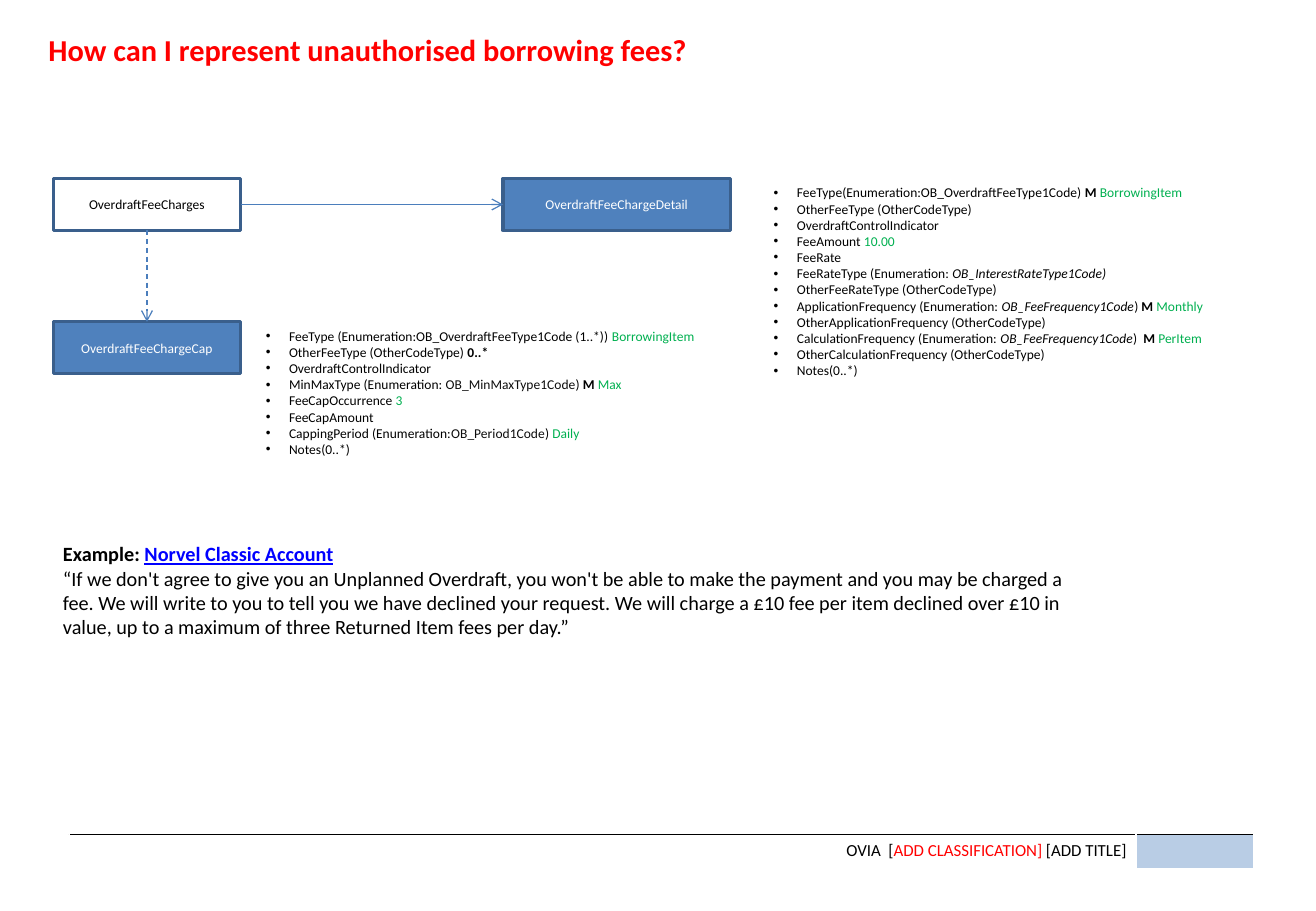
from dataclasses import dataclass
from typing import Any

from lxml.etree import SubElement
from pptx import Presentation
from pptx.dml.color import RGBColor as RGB
from pptx.enum.dml import MSO_LINE as Dash
from pptx.enum.shapes import MSO_CONNECTOR as Conn, MSO_SHAPE as Shape
from pptx.enum.text import MSO_ANCHOR as Anchor, PP_ALIGN as Align
from pptx.oxml.ns import qn
from pptx.util import Inches, Pt

WIDTH, HEIGHT = Inches(10.83), Inches(7.5)


@dataclass(frozen=True)
class Theme:
    font: str = "Calibri"
    ink: str = "000000"
    soft_ink: str = "0D0D0D"
    paper: str = "FFFFFF"
    alert: str = "FF0000"
    value: str = "00B050"
    link: str = "0000FF"
    box: str = "4F81BD"
    box_line: str = "3A5F8C"
    arrow: str = "4B7EBC"
    footer: str = "B9CDE5"
    title_size: float = 18
    example_size: float = 12
    footer_size: float = 10
    small_size: float = 8


THEME = Theme()


@dataclass(frozen=True)
class Area:
    """Left, top, width and height in hundredths of the slide."""
    left: float
    top: float
    width: float
    height: float

    def emu(self) -> tuple[int, int, int, int]:
        return col(self.left), row(self.top), col(self.width), row(self.height)


@dataclass(frozen=True)
class Run:
    text: str
    color: str = THEME.ink
    bold: bool = False
    italic: bool = False
    underline: bool = False


@dataclass(frozen=True)
class TextBlock:
    area: Area
    size: float
    paragraphs: list[list[Run]]
    bullets: bool = False


@dataclass(frozen=True)
class ClassBox:
    name: str
    area: Area
    fill: str | None = THEME.box
    color: str = THEME.paper


@dataclass(frozen=True)
class Arrow:
    """Joins two class boxes at their numbered connection sites."""
    start: str
    start_site: int
    end: str
    end_site: int
    dash: Dash = Dash.SOLID


def col(share: float) -> int:
    return round(WIDTH * share / 100)


def row(share: float) -> int:
    return round(HEIGHT * share / 100)


def value(text: str) -> Run:
    return Run(text, THEME.value)


def italic(text: str) -> Run:
    return Run(text, italic=True)


def plain(*texts: str) -> list[list[Run]]:
    return [[Run(text)] for text in texts]


MANDATORY = Run("M ", bold=True)
LEFT, UPPER, LOWER = 4.06, 19.6, 35.33
BOX_W, BOX_H, LIST_W = 14.22, 5.7, 34.81

BOXES = [
    ClassBox("OverdraftFeeCharges", Area(LEFT, UPPER, BOX_W, BOX_H), None, THEME.ink),
    ClassBox("OverdraftFeeChargeDetail", Area(38.23, UPPER, 17.27, BOX_H)),
    ClassBox("OverdraftFeeChargeCap", Area(LEFT, LOWER, BOX_W, BOX_H)),
]
ARROWS = [
    Arrow("OverdraftFeeCharges", 2, "OverdraftFeeChargeCap", 0, Dash.DASH),
    Arrow("OverdraftFeeCharges", 3, "OverdraftFeeChargeDetail", 1),
]
DETAIL_FIELDS = [
    [Run("FeeType(Enumeration:OB_OverdraftFeeType1Code) "), MANDATORY, value("BorrowingItem")],
    *plain("OtherFeeType (OtherCodeType)", "OverdraftControlIndicator"),
    [Run("FeeAmount "), value("10.00")],
    *plain("FeeRate"),
    [Run("FeeRateType (Enumeration: "), italic("OB_InterestRateType1Code)")],
    *plain("OtherFeeRateType (OtherCodeType)"),
    [Run("ApplicationFrequency (Enumeration: "), italic("OB_FeeFrequency1Code"),
     Run(") "), MANDATORY, value("Monthly")],
    *plain("OtherApplicationFrequency (OtherCodeType)"),
    [Run("CalculationFrequency (Enumeration: "), italic("OB_FeeFrequency1Code"),
     Run(")  "), MANDATORY, value("PerItem")],
    *plain("OtherCalculationFrequency (OtherCodeType)", "Notes(0..*)"),
]
CAP_FIELDS = [
    [Run("FeeType (Enumeration:OB_OverdraftFeeType1Code (1..*)) "), value("BorrowingItem")],
    [Run("OtherFeeType (OtherCodeType) "), Run("0..*", bold=True)],
    *plain("OverdraftControlIndicator"),
    [Run("MinMaxType (Enumeration: "), Run("OB_MinMaxType1Code", THEME.soft_ink),
     Run(") "), MANDATORY, value("Max")],
    [Run("FeeCapOccurrence "), value("3")],
    *plain("FeeCapAmount"),
    [Run("CappingPeriod (Enumeration:"), Run("OB_Period1Code", THEME.soft_ink),
     Run(") "), value("Daily")],
    *plain("Notes(0..*)"),
]
EXAMPLE = [
    [Run("Example: ", bold=True),
     Run("Norvel Classic Account", THEME.link, bold=True, underline=True)],
    *plain("“If we don't agree to give you an Unplanned Overdraft, you won't be able to make "
           "the payment and you may be charged a fee. We will write to you to tell you we have "
           "declined your request. We will charge a £10 fee per item declined over £10 in "
           "value, up to a maximum of three Returned Item fees per day.”"),
]
TITLE = [[Run("How can I represent unauthorised borrowing fees?", THEME.alert, bold=True)]]
BLOCKS = [
    TextBlock(Area(2.77, 2.8, 53, 5.33), THEME.title_size, TITLE),
    TextBlock(Area(57.89, UPPER, LIST_W, 22.93), THEME.small_size, DETAIL_FIELDS, True),
    TextBlock(Area(19.3, LOWER, LIST_W, 15.73), THEME.small_size, CAP_FIELDS, True),
    TextBlock(Area(3.88, 58.8, 78.95, 22.93), THEME.example_size, EXAMPLE),
]
FOOTER = [Run("OVIA  ["), Run("ADD CLASSIFICATION] ", THEME.alert), Run("[ADD TITLE]")]
FOOTER_AREA = Area(5.26, 91.6, 90.03, 3.73)
FOOTER_COLUMNS = (81.07, 8.96)


def add_runs(p: Any, runs: list[Run], size: float) -> None:
    for run in runs:
        r = p.add_run()
        r.text = run.text
        formats = {"name": THEME.font, "size": Pt(size), "bold": run.bold,
                   "italic": run.italic, "underline": run.underline}
        for name, setting in formats.items():
            setattr(r.font, name, setting)
        r.font.color.rgb = RGB.from_string(run.color)


def add_bullet(p: Any) -> None:
    pPr = p._p.get_or_add_pPr()
    pPr.set("marL", str(Inches(0.19)))
    pPr.set("indent", str(-Inches(0.19)))
    SubElement(pPr, qn("a:buFont"), typeface="Arial")
    SubElement(pPr, qn("a:buChar"), char="•")


def add_block(slide: Any, block: TextBlock) -> None:
    tf = slide.shapes.add_textbox(*block.area.emu()).text_frame
    tf.word_wrap = True
    for i, runs in enumerate(block.paragraphs):
        p = tf.add_paragraph() if i else tf.paragraphs[0]
        if block.bullets:
            add_bullet(p)
        add_runs(p, runs, block.size)


def add_box(slide: Any, box: ClassBox) -> Any:
    sp = slide.shapes.add_shape(Shape.RECTANGLE, *box.area.emu())
    sp.shadow.inherit = False
    if box.fill:
        sp.fill.solid()
        sp.fill.fore_color.rgb = RGB.from_string(box.fill)
    else:
        sp.fill.background()
    sp.line.color.rgb = RGB.from_string(THEME.box_line)
    sp.line.width = Pt(2)
    tf = sp.text_frame
    tf.vertical_anchor = Anchor.MIDDLE
    p = tf.paragraphs[0]
    p.alignment = Align.CENTER
    add_runs(p, [Run(box.name, box.color)], THEME.small_size)
    return sp


def add_arrow(slide: Any, arrow: Arrow, boxes: dict[str, Any]) -> None:
    line = slide.shapes.add_connector(Conn.STRAIGHT, 0, 0, 0, 0)
    line.begin_connect(boxes[arrow.start], arrow.start_site)
    line.end_connect(boxes[arrow.end], arrow.end_site)
    line.line.color.rgb = RGB.from_string(THEME.arrow)
    line.line.width = Pt(0.75)
    line.line.dash_style = arrow.dash
    SubElement(line.line._get_or_add_ln(), qn("a:tailEnd"), type="arrow")
    SubElement(line._element.spPr, qn("a:effectLst"))


def add_top_border(cell: Any) -> None:
    """Puts the border before the fill, so call it before the fill is set."""
    ln = SubElement(cell._tc.get_or_add_tcPr(), qn("a:lnT"), w=str(Pt(1)))
    SubElement(SubElement(ln, qn("a:solidFill")), qn("a:srgbClr"), val=THEME.ink)


def add_footer(slide: Any) -> None:
    table = slide.shapes.add_table(1, 2, *FOOTER_AREA.emu()).table
    table.first_row = table.horz_banding = False
    for column, width in zip(table.columns, FOOTER_COLUMNS):
        column.width = col(width)
    label, block = table.rows[0].cells
    for cell in (label, block):
        cell.margin_left = cell.margin_right = Inches(0.08)
        add_top_border(cell)
    label.fill.background()
    block.fill.solid()
    block.fill.fore_color.rgb = RGB.from_string(THEME.footer)
    p = label.text_frame.paragraphs[0]
    p.alignment = Align.RIGHT
    add_runs(p, FOOTER, THEME.footer_size)
    end = SubElement(block.text_frame.paragraphs[0]._p, qn("a:endParaRPr"))
    end.set("sz", str(round(THEME.footer_size * 100)))


def main() -> None:
    prs = Presentation()
    prs.slide_width, prs.slide_height = WIDTH, HEIGHT
    slide = prs.slides.add_slide(prs.slide_layouts[6])
    add_footer(slide)
    boxes = {box.name: add_box(slide, box) for box in BOXES}
    for block in BLOCKS:
        add_block(slide, block)
    for arrow in ARROWS:
        add_arrow(slide, arrow, boxes)
    prs.save("out.pptx")


if __name__ == "__main__":
    main()
